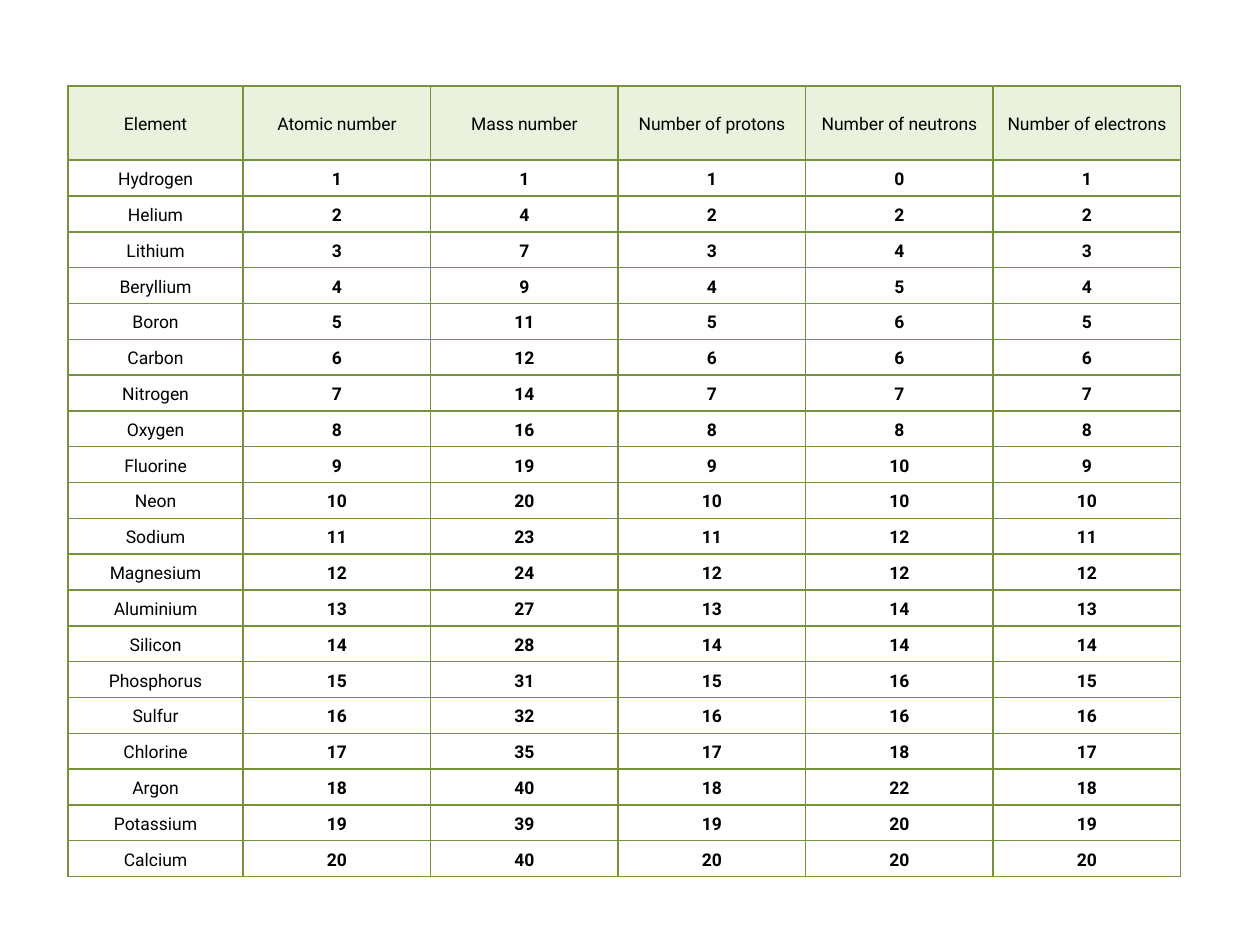
import pptx
import pptx.dml.color
import pptx.enum.text
import pptx.oxml
import pptx.oxml.ns
import pptx.util
from pptx.util import Cm

COLOURS = {"text": "000000", "header": "EAF1DD", "border": "76923C"}

HEADINGS = ["Element", "Atomic number", "Mass number", "Number of protons",
            "Number of neutrons", "Number of electrons"]
# Elements in order of atomic number, with their mass numbers
MASS_NUMBERS = {
    "Hydrogen": 1, "Helium": 4, "Lithium": 7, "Beryllium": 9, "Boron": 11,
    "Carbon": 12, "Nitrogen": 14, "Oxygen": 16, "Fluorine": 19, "Neon": 20,
    "Sodium": 23, "Magnesium": 24, "Aluminium": 27, "Silicon": 28,
    "Phosphorus": 31, "Sulfur": 32, "Chlorine": 35, "Argon": 40,
    "Potassium": 39, "Calcium": 40,
}

LEFT, TOP = 1.37, 1.73
ELEMENT_WIDTH, NUMBER_WIDTH = 3.53, 3.78
HEADER_HEIGHT, TABLE_HEIGHT = 1.5, 15.95

TABLE_FORMAT = {"first_row": False, "horz_banding": False}
CELL_FORMAT = {
    "vertical_anchor": pptx.enum.text.MSO_ANCHOR.MIDDLE,
    "margin_left": Cm(0.18), "margin_right": Cm(0.18),
    "margin_top": 0, "margin_bottom": 0,
}
PARAGRAPH_FORMAT = {
    "alignment": pptx.enum.text.PP_ALIGN.CENTER,
    "line_spacing": 1.15, "space_after": pptx.util.Pt(10),
}
FONT_FORMAT = {"name": "Roboto", "size": pptx.util.Pt(10)}


def apply_format(target, values):
    for attribute, value in values.items():
        setattr(target, attribute, value)


def colour(name):
    return pptx.dml.color.RGBColor.from_string(COLOURS[name])


def element_rows():
    """Derive the particle counts from atomic and mass numbers."""
    return [[element, atomic, mass, atomic, mass - atomic, atomic]
            for atomic, (element, mass) in enumerate(MASS_NUMBERS.items(), 1)]


def add_borders(cell):
    properties = cell._tc.get_or_add_tcPr()
    for side in "LRTB":
        properties.append(pptx.oxml.parse_xml(
            f'<a:ln{side} {pptx.oxml.ns.nsdecls("a")} w="{pptx.util.Pt(1)}">'
            f'<a:solidFill><a:srgbClr val="{COLOURS["border"]}"/></a:solidFill>'
            f'</a:ln{side}>'))


def fill_cell(cell, content, is_header):
    apply_format(cell, CELL_FORMAT)
    add_borders(cell)
    if is_header:
        cell.fill.solid()
        cell.fill.fore_color.rgb = colour("header")
    else:
        cell.fill.background()

    paragraph = cell.text_frame.paragraphs[0]
    apply_format(paragraph, PARAGRAPH_FORMAT)
    run = paragraph.add_run()
    run.text = str(content)
    apply_format(run.font, FONT_FORMAT)
    run.font.bold = isinstance(content, int)
    run.font.color.rgb = colour("text")


def add_element_table(slide):
    contents = [HEADINGS] + element_rows()
    widths = [ELEMENT_WIDTH] + [NUMBER_WIDTH] * (len(HEADINGS) - 1)
    row_height = (TABLE_HEIGHT - HEADER_HEIGHT) / len(MASS_NUMBERS)

    table = slide.shapes.add_table(
        len(contents), len(HEADINGS), Cm(LEFT), Cm(TOP),
        Cm(sum(widths)), Cm(TABLE_HEIGHT)).table
    apply_format(table, TABLE_FORMAT)
    for column, width in zip(table.columns, widths):
        column.width = Cm(width)
    for index, (row, values) in enumerate(zip(table.rows, contents)):
        is_header = index == 0
        row.height = Cm(HEADER_HEIGHT if is_header else row_height)
        for cell, content in zip(row.cells, values):
            fill_cell(cell, content, is_header)


def main():
    presentation = pptx.Presentation()
    presentation.slide_width = Cm(25.4)
    presentation.slide_height = Cm(19.05)
    slide = presentation.slides.add_slide(presentation.slide_layouts[6])
    add_element_table(slide)
    presentation.save("out.pptx")


if __name__ == "__main__":
    main()
